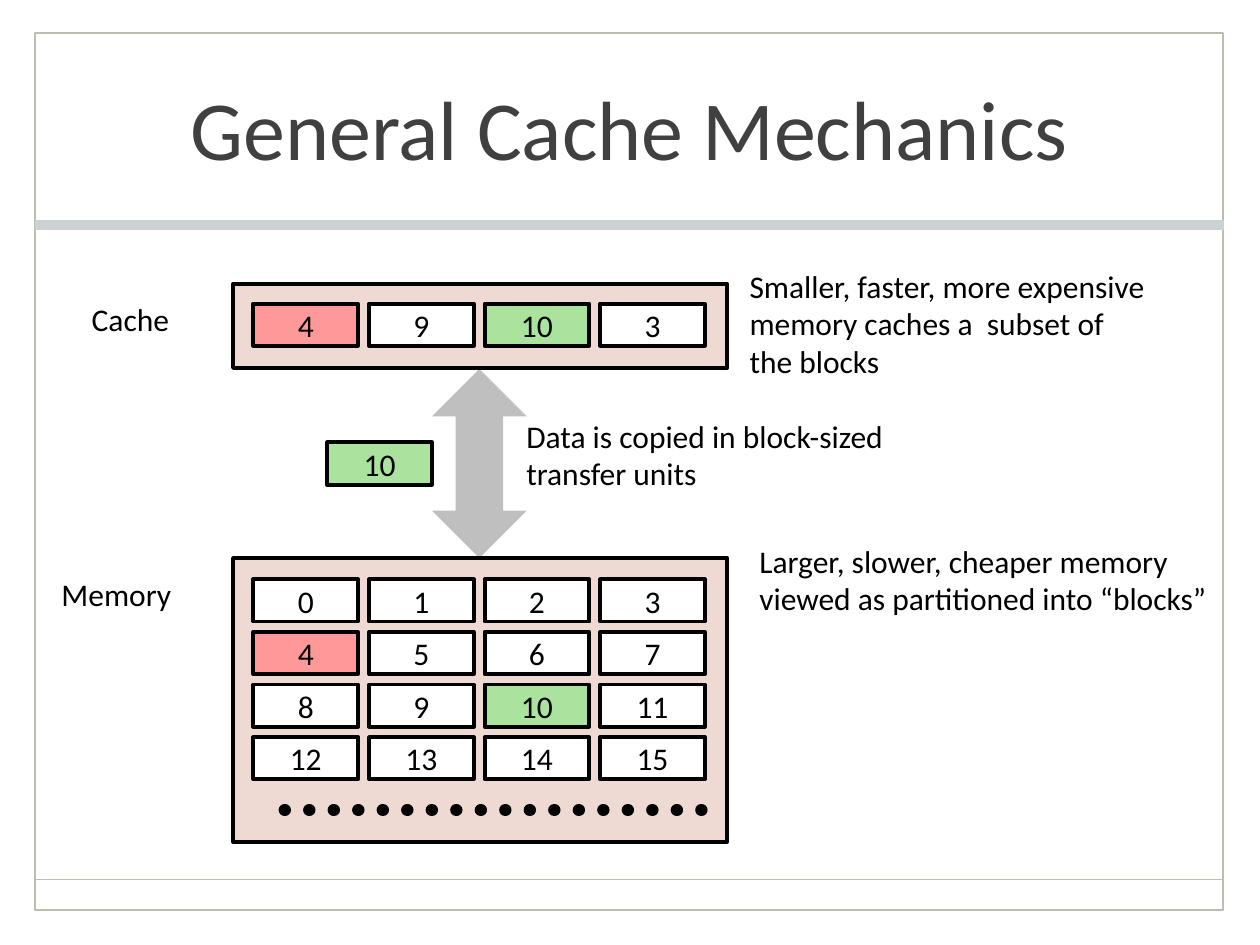
from lxml import etree
from pptx import Presentation, util as u
from pptx.dml.color import RGBColor
from pptx.enum import dml, shapes, text
from pptx.oxml.ns import qn

BLACK, WHITE, PANEL = "000000", "FFFFFF", "EFDAD3"
BLOCK_FILLS = {4: "FF9999", 10: "A9E39D"}
BLOCK_LEFT, BLOCK_W, BLOCK_H = 5.11, 2.11, 0.85
COL_STEP, ROW_STEP = 2.33, 1.06
MEMORY_TOP, CACHE_TOP = 11.68, 6.12

NOTES = [
    ((1.6, 5.92, 2.11, 0.76), "top", ["Cache"]),
    ((0.99, 11.46, 2.79, 0.76), "top", ["Memory"]),
    ((15.06, 10.64, 9.86, 2.16), "middle",
     ["Larger, slower, cheaper memory", "viewed as partitioned into “blocks”"]),
    ((10.36, 8.31, 7.87, 1.78), "middle",
     ["Data is copied in block-sized transfer units"]),
    ((14.86, 4.9, 8.74, 3.3), "middle",
     ["Smaller, faster, more expensive", "memory caches a  subset of", "the blocks"]),
]


def rgb(value):
    """Return the colour for a hex string."""
    return RGBColor.from_string(value)


def apply(obj, values):
    """Set each attribute of an object from a dict."""
    for name, value in values.items():
        setattr(obj, name, value)


def write(tf, lines, size=18, color=BLACK, align="LEFT", anchor="middle", spacing=1.0):
    """Fill a text frame with one formatted paragraph per line."""
    apply(tf, {"word_wrap": True, "auto_size": text.MSO_AUTO_SIZE.NONE,
               "vertical_anchor": text.MSO_ANCHOR[anchor.upper()]})
    for i, line in enumerate(lines):
        p = tf.add_paragraph() if i else tf.paragraphs[0]
        apply(p, {"alignment": text.PP_ALIGN[align], "line_spacing": spacing})
        r = p.add_run()
        r.text = line
        apply(r.font, {"size": u.Pt(size), "name": "Calibri"})
        r.font.color.rgb = rgb(color)


def add_box(s, box, fill=None, line=None, width=2.25, kind="RECTANGLE"):
    """Add a preset shape with an optional fill and outline."""
    sp = s.shapes.add_shape(shapes.MSO_SHAPE[kind], *map(u.Cm, box))
    sp.shadow.inherit = False
    if fill:
        sp.fill.solid()
        sp.fill.fore_color.rgb = rgb(fill)
    else:
        sp.fill.background()
    if line:
        sp.line.color.rgb = rgb(line)
        sp.line.width = u.Pt(width)
    else:
        sp.line.fill.background()
    return sp


def add_line(s, ends, color, width):
    """Add a straight line without a shadow."""
    cx = s.shapes.add_connector(shapes.MSO_CONNECTOR.STRAIGHT, *map(u.Cm, ends))
    cx.line.color.rgb = rgb(color)
    cx.line.width = u.Pt(width)
    etree.SubElement(cx._element.spPr, qn("a:effectLst"))
    return cx


def add_block(s, left, top, number):
    """Add one numbered block."""
    sp = add_box(s, (left, top, BLOCK_W, BLOCK_H), BLOCK_FILLS.get(number, WHITE), BLACK)
    write(sp.text_frame, [str(number)], align="CENTER")


def add_row(s, top, numbers):
    """Add a row of evenly spaced blocks."""
    for col, number in enumerate(numbers):
        add_block(s, BLOCK_LEFT + col * COL_STEP, top, number)


def add_dots(s):
    """Add the row of round dots below the memory blocks."""
    cx = add_line(s, (5.74, 16.33, 14.22, 16.33), BLACK, 7)
    cx.line.dash_style = dml.MSO_LINE.ROUND_DOT
    cx.line._ln.set("cap", "rnd")


def add_note(s, box, anchor, lines):
    """Add a label or an explanation."""
    sp = s.shapes.add_textbox(*map(u.Cm, box))
    write(sp.text_frame, lines, anchor=anchor, spacing=0.98 if anchor == "middle" else 1.0)


def add_frame(s):
    """Add the slide border, the footer line and the band below the title."""
    add_box(s, (0.71, 0.66, 23.95, 17.68), line="BEBDB2", width=1)
    add_line(s, (0.71, 17.73, 24.66, 17.73), "BEBDB2", 1)
    add_box(s, (0.71, 4.45, 23.95, 0.18), "CBD2D5", "D1D0C8", 0.25)


def set_title(s, title):
    """Place and format the title placeholder."""
    sp = s.shapes.title
    apply(sp, dict(zip(("left", "top", "width", "height"),
                       map(u.Cm, (2.49, 0.69, 20.4, 3.73)))))
    write(sp.text_frame, [title], 48, "404040", "CENTER")


def main():
    """Build the slide and save it."""
    prs = Presentation()
    apply(prs, {"slide_width": u.Cm(25.4), "slide_height": u.Cm(19.05)})
    s = prs.slides.add_slide(prs.slide_layouts[5])
    add_frame(s)
    set_title(s, "General Cache Mechanics")
    add_box(s, (8.71, 7.44, 1.91, 3.81), "BFBFBF", kind="UP_DOWN_ARROW")
    for top, height in ((11.25, 5.72), (5.72, 1.7)):
        add_box(s, (4.7, top, 9.96, height), PANEL, BLACK)
    for row in range(4):
        add_row(s, MEMORY_TOP + row * ROW_STEP, range(4 * row, 4 * row + 4))
    add_dots(s)
    add_row(s, CACHE_TOP, (4, 9, 10, 3))
    add_block(s, 6.6, 8.92, 10)
    for note in NOTES:
        add_note(s, *note)
    prs.save("out.pptx")


if __name__ == "__main__":
    main()
